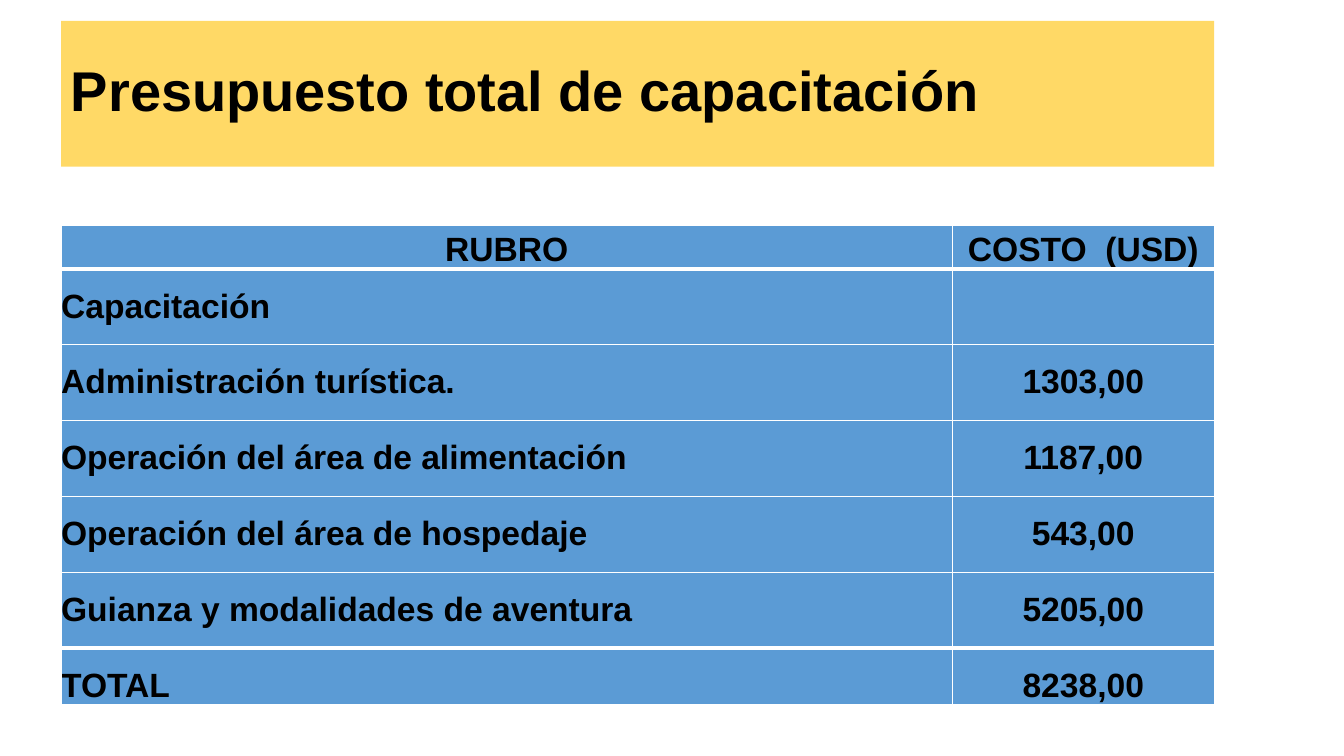
from lxml.etree import SubElement
from pptx import Presentation
from pptx.dml.color import RGBColor
from pptx.enum.shapes import MSO_SHAPE as SHAPE
from pptx.enum.text import MSO_ANCHOR as ANCHOR, PP_ALIGN as ALIGN
from pptx.oxml.ns import qn
from pptx.util import Cm, Pt

YELLOW, BLUE, WHITE, BLACK = "FFD966", "5B9BD5", "FFFFFF", "000000"


def write(p, text, size, align, spacing):
    """Put one bold Arial run into paragraph p."""
    p.alignment = align
    p.line_spacing = spacing
    r = p.add_run()
    r.text = text
    r.font.name = "Arial"
    r.font.size = Pt(size)
    r.font.bold = True
    r.font.color.rgb = RGBColor.from_string(BLACK)


def add_border(cell, side, width):
    """Draw one cell edge; side is L, R, T or B."""
    ln = SubElement(cell._tc.get_or_add_tcPr(), qn(f"a:ln{side}"), w=str(Pt(width)))
    SubElement(SubElement(ln, qn("a:solidFill")), qn("a:srgbClr"), val=WHITE)


prs = Presentation()
prs.slide_width, prs.slide_height = Cm(33.87), Cm(19.05)
s = prs.slides.add_slide(prs.slide_layouts[6])
left, width = Cm(1.54), Cm(29.06)

# Title band
title = s.shapes.add_shape(SHAPE.RECTANGLE, left, Cm(0.53), width, Cm(3.67))
title.shadow.inherit = False
title.fill.solid()
title.fill.fore_color.rgb = RGBColor.from_string(YELLOW)
title.line.fill.background()
tf = title.text_frame
tf.word_wrap = True
tf.vertical_anchor = ANCHOR.MIDDLE
write(tf.paragraphs[0], "Presupuesto total de capacitación", 40, ALIGN.LEFT, 0.9)

# Budget table
budget = [
    ("RUBRO", "COSTO  (USD)"),
    ("Capacitación", ""),
    ("Administración turística.", "1303,00"),
    ("Operación del área de alimentación", "1187,00"),
    ("Operación del área de hospedaje", "543,00"),
    ("Guianza y modalidades de aventura", "5205,00"),
    ("TOTAL", "8238,00"),
]
last = len(budget) - 1
row_heights = [0.86] + [1.91] * (last - 1) + [1.37]
table = s.shapes.add_table(len(budget), 2, left, Cm(5.69), width,
                           Cm(sum(row_heights))).table
for column, column_width in zip(table.columns, (22.46, 6.6)):
    column.width = Cm(column_width)

for i, (texts, height) in enumerate(zip(budget, row_heights)):
    table.rows[i].height = Cm(height)
    for j, text in enumerate(texts):
        cell = table.cell(i, j)
        cell.margin_left = cell.margin_right = cell.margin_top = cell.margin_bottom = 0
        # Thick rules below the header and above the total
        top = 3 if i in (1, last) else 1
        bottom = 3 if i in (0, last - 1) else 1
        for side, line_width in zip("LRTB", (1, 1, top, bottom)):
            add_border(cell, side, line_width)
        cell.fill.solid()
        cell.fill.fore_color.rgb = RGBColor.from_string(BLUE)
        if text:
            align = ALIGN.CENTER if i == 0 or j == 1 else ALIGN.JUSTIFY
            write(cell.text_frame.paragraphs[0], text, 24, align, 1.15 if i == 0 else 1.5)

prs.save("out.pptx")
